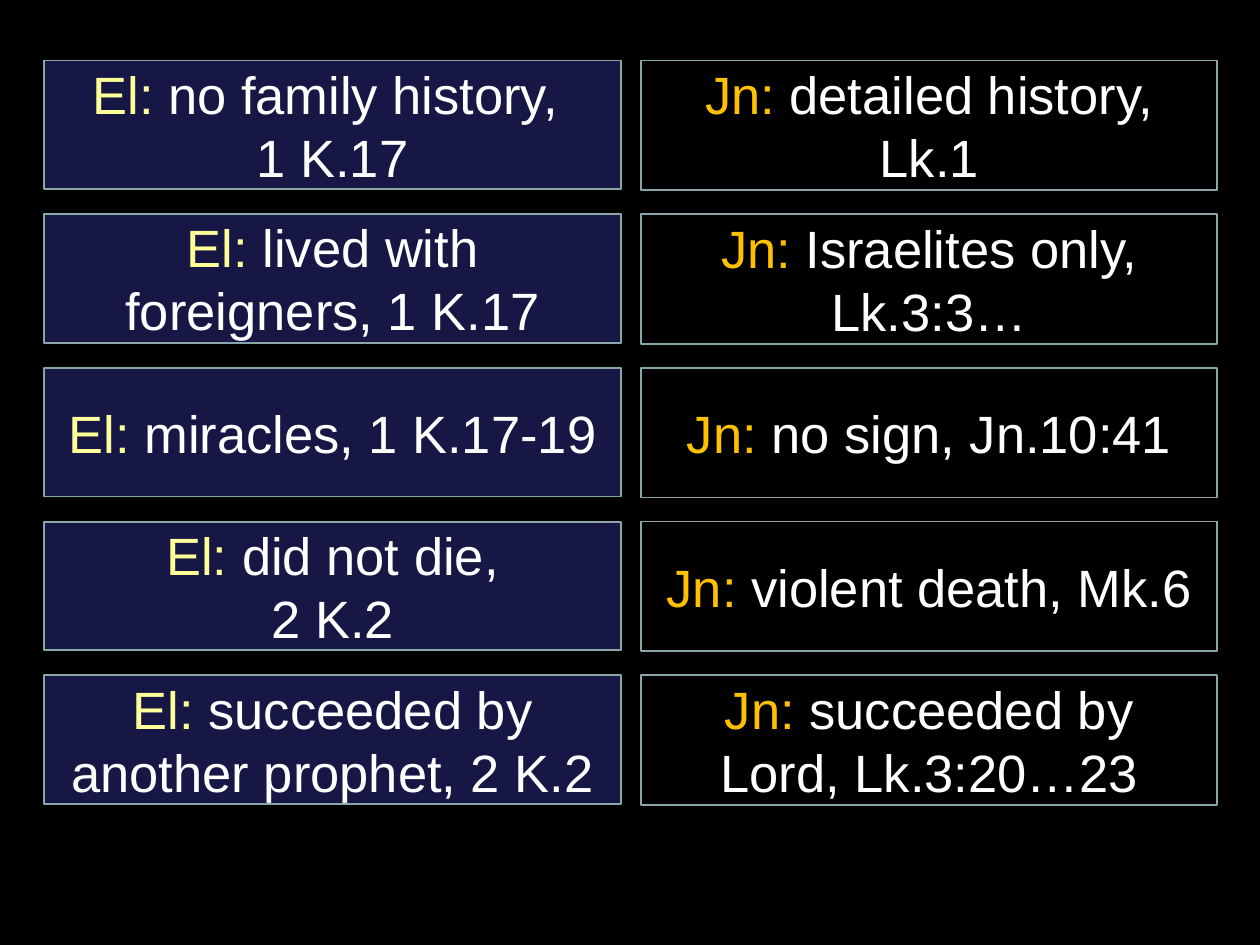
from pptx import Presentation
from pptx.dml.color import RGBColor
from pptx.enum.shapes import MSO_SHAPE
from pptx.enum.text import MSO_ANCHOR, PP_ALIGN
from pptx.util import Inches, Pt

BLACK = RGBColor(0x00, 0x00, 0x00)
WHITE = RGBColor(0xFF, 0xFF, 0xFF)
NAVY = RGBColor(0x17, 0x17, 0x45)
BORDER = RGBColor(0x8A, 0xA6, 0xA8)
YELLOW = RGBColor(0xFF, 0xFF, 0x99)
AMBER = RGBColor(0xFF, 0xC0, 0x00)

ELIJAH = [
    "no family history, \n1 K.17",
    "lived with foreigners, 1 K.17",
    "miracles, 1 K.17-19",
    "did not die,\n2 K.2",
    "succeeded by another prophet, 2 K.2",
]
JOHN = [
    "detailed history, Lk.1",
    "Israelites only, Lk.3:3…",
    "no sign, Jn.10:41",
    "violent death, Mk.6",
    "succeeded by\nLord, Lk.3:20…23",
]
ROW_PITCH = Inches(1.22)


def style_run(run, color):
    run.font.name = "Arial"
    run.font.size = Pt(30)
    run.font.color.rgb = color


def add_fact(slide, left, top, width, height, prophet, fact, fill, accent):
    card = slide.shapes.add_shape(MSO_SHAPE.RECTANGLE, left, top, width, height)
    card.shadow.inherit = False
    card.fill.solid()
    card.fill.fore_color.rgb = fill
    card.line.color.rgb = BORDER
    card.line.width = Pt(1)
    card.text_frame.word_wrap = True
    card.text_frame.vertical_anchor = MSO_ANCHOR.MIDDLE
    statement = card.text_frame.paragraphs[0]
    statement.alignment = PP_ALIGN.CENTER
    statement.text = prophet
    style_run(statement.runs[0], accent)
    for index, line in enumerate(f" {fact}".split("\n")):
        if index:
            statement.add_line_break()
        wording = statement.add_run()
        wording.text = line
        style_run(wording, WHITE)


def add_prophet_column(slide, left, top, width, height, prophet, facts, fill, accent):
    for row, fact in enumerate(facts):
        add_fact(slide, left, top + row * ROW_PITCH, width, height,
                 prophet, fact, fill, accent)


def main():
    deck = Presentation()
    deck.slide_width, deck.slide_height = Inches(10), Inches(7.5)
    slide = deck.slides.add_slide(deck.slide_layouts[6])
    slide.background.fill.solid()
    slide.background.fill.fore_color.rgb = BLACK
    add_prophet_column(slide, Inches(0.35), Inches(0.48), Inches(4.58), Inches(1.02),
                       "El:", ELIJAH, NAVY, YELLOW)
    add_prophet_column(slide, Inches(5.09), Inches(0.48), Inches(4.57), Inches(1.03),
                       "Jn:", JOHN, BLACK, AMBER)
    deck.save("out.pptx")


if __name__ == "__main__":
    main()
